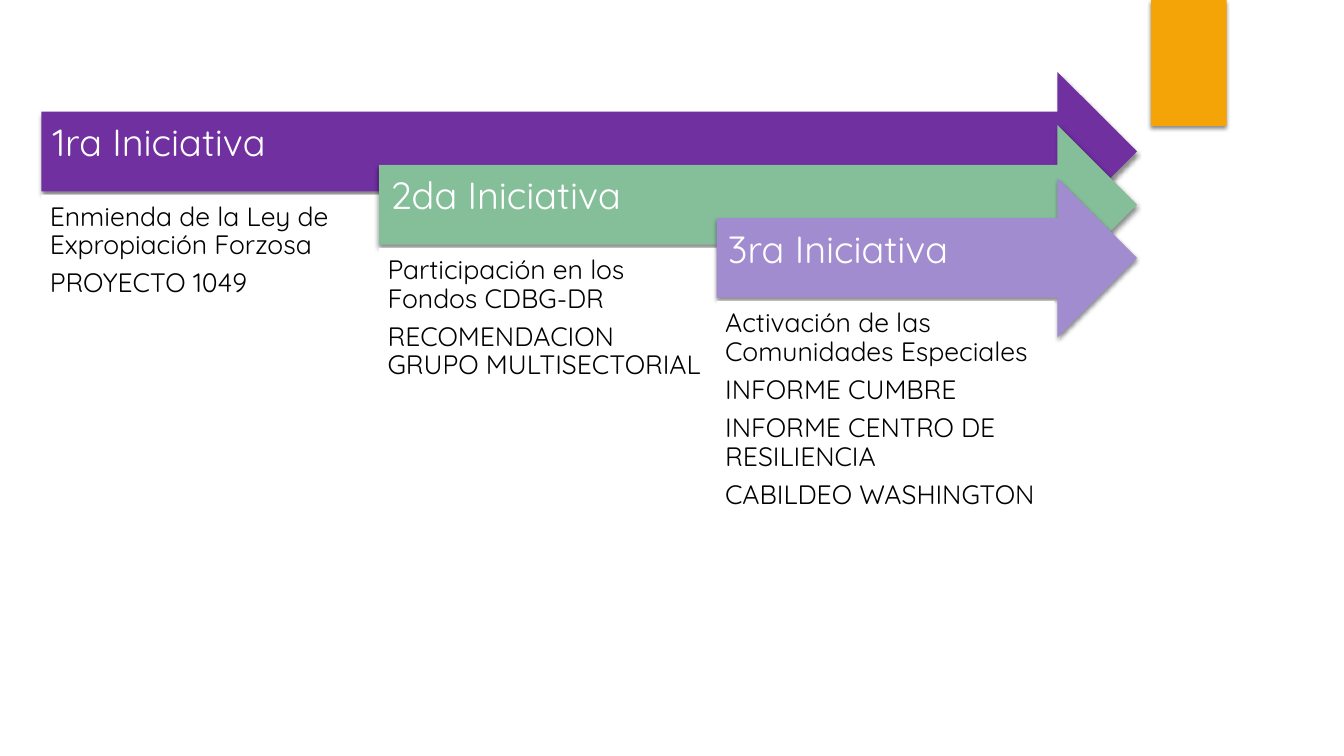
from lxml import etree
from pptx import Presentation
from pptx.dml.color import RGBColor
from pptx.enum.shapes import MSO_SHAPE as Shape
from pptx.enum.text import MSO_ANCHOR as Anchor, PP_ALIGN as Align
from pptx.oxml import parse_xml
from pptx.oxml.ns import nsdecls
from pptx.util import Pt

# Content: heading, arrow colour, panel height, panel lines
INITIATIVES = [
    ("1ra Iniciativa", "purple", 219.6,
     ["Enmienda de la Ley de Expropiación Forzosa", "PROYECTO 1049"]),
    ("2da Iniciativa", "green", 219.6,
     ["Participación en los Fondos CDBG-DR",
      "RECOMENDACION GRUPO MULTISECTORIAL"]),
    ("3ra Iniciativa", "lilac", 216,
     ["Activación de las Comunidades Especiales", "INFORME CUMBRE",
      "INFORME CENTRO DE RESILIENCIA", "CABILDEO WASHINGTON"]),
]

THEME = {
    "font": "Quicksand", "heading": 27, "body": 19,
    "purple": "7030A0", "green": "85BF9A", "lilac": "A18CD0",
    "orange": "F5A408", "white": "FFFFFF", "black": "000000",
}

# Layout in points
SLIDE_W, SLIDE_H = 960, 540
LEFT, TOP, RIGHT = 29.6, 51.3, 812.2
STEP_X, STEP_Y = 241.2, 38
ARROW_H, PANEL_DROP = 113.8, 87.8
TAB_BOX = (822.2, 0, 54, 90)
HEADING_INSETS = (8, 8, 20, 18)
PANEL_INSETS = (6, 6, 6, 6)


def color(name):
    return RGBColor.from_string(THEME[name])


def add_block(s, kind, box, fill, shadow=False):
    sp = s.shapes.add_shape(kind, *(Pt(v) for v in box))
    sp.fill.solid()
    sp.fill.fore_color.rgb = color(fill)
    sp.line.fill.background()
    sp.shadow.inherit = False
    if shadow:
        effects = sp.element.spPr.find("{*}effectLst")
        effects.append(parse_xml(
            f'<a:outerShdw {nsdecls("a")} blurRad="{Pt(3)}" dist="{Pt(2)}" '
            'dir="5400000" rotWithShape="0"><a:srgbClr val="000000">'
            '<a:alpha val="45000"/></a:srgbClr></a:outerShdw>'))
    return sp


def write(sp, lines, size, ink, insets, anchor):
    tf = sp.text_frame
    sides = ("margin_left", "margin_top", "margin_right", "margin_bottom")
    frame = dict(zip(sides, map(Pt, insets)),
                 word_wrap=True, vertical_anchor=anchor)
    for name, value in frame.items():
        setattr(tf, name, value)
    layout = {"alignment": Align.LEFT, "line_spacing": 0.9,
              "space_after": Pt(0.35 * THEME[size])}
    look = {"name": THEME["font"], "size": Pt(THEME[size])}
    for i, line in enumerate(lines):
        p = tf.paragraphs[0] if i == 0 else tf.add_paragraph()
        r = p.add_run()
        r.text = line
        for name, value in layout.items():
            setattr(p, name, value)
        for name, value in look.items():
            setattr(r.font, name, value)
        r.font.color.rgb = color(ink)


def main():
    prs = Presentation()
    prs.slide_width, prs.slide_height = Pt(SLIDE_W), Pt(SLIDE_H)
    s = prs.slides.add_slide(prs.slide_layouts[6])

    # Corner tab
    add_block(s, Shape.RECTANGLE, TAB_BOX, "orange", shadow=True)

    # Stepped arrows, all ending at the same right edge, with text panels
    for i, (heading, fill, panel_h, lines) in enumerate(INITIATIVES):
        x, y = LEFT + i * STEP_X, TOP + i * STEP_Y
        arrow = add_block(s, Shape.RIGHT_ARROW, (x, y, RIGHT - x, ARROW_H),
                          fill, shadow=True)
        write(arrow, [heading], "heading", "white", HEADING_INSETS,
              Anchor.MIDDLE)
        panel = add_block(s, Shape.RECTANGLE,
                          (x, y + PANEL_DROP, STEP_X, panel_h), "white")
        write(panel, lines, "body", "black", PANEL_INSETS, Anchor.TOP)

    prs.save("out.pptx")


if __name__ == "__main__":
    main()
